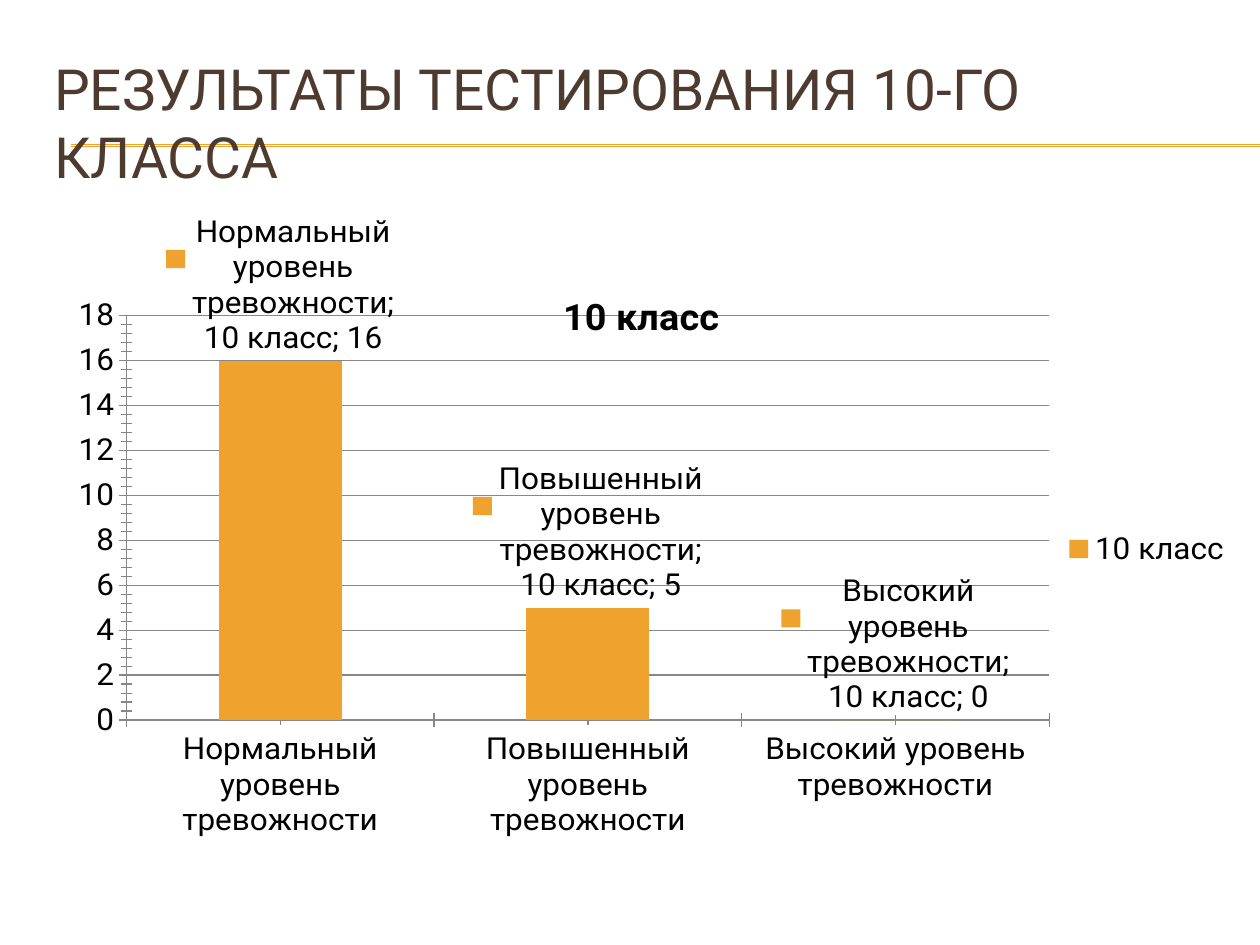
import copy
from dataclasses import dataclass

import lxml.etree
import pptx
import pptx.chart.data
import pptx.dml.color
import pptx.enum.chart
import pptx.enum.shapes
import pptx.enum.text
import pptx.oxml
import pptx.oxml.ns
import pptx.util

qn = pptx.oxml.ns.qn


@dataclass(frozen=True)
class Theme:
    font: str = "Roboto"
    heading: str = "4E3B30"
    accent: str = "F0A22E"
    text: str = "000000"
    grid: str = "878787"
    heading_size: float = 32.4
    chart_size: float = 18
    chart_title_size: float = 21.6
    line_width: float = 0.75


@dataclass(frozen=True)
class Slide:
    width: float = 10
    height: float = 7.5

    def x(self, share: float) -> int:
        return pptx.util.Inches(self.width * share)

    def y(self, share: float) -> int:
        return pptx.util.Inches(self.height * share)


@dataclass(frozen=True)
class Rule:
    top: float
    left: float = 0.056
    right: float = 1


THEME = Theme()
PAGE = Slide()
RULES = [Rule(0.153), Rule(0.155)]
MARGIN, CONTENT_WIDTH = 0.033, 0.95
SERIES_NAME = "10 класс"
LEVELS = {
    "Нормальный уровень тревожности": 16,
    "Повышенный уровень тревожности": 5,
    "Высокий уровень тревожности": 0,
}


def rgb(value: str) -> pptx.dml.color.RGBColor:
    return pptx.dml.color.RGBColor.from_string(value)


def apply(target, values: dict) -> None:
    for name, value in values.items():
        setattr(target, name, value)


def format_font(font, size: float, color: str, bold: bool = False) -> None:
    apply(font, {"name": THEME.font, "size": pptx.util.Pt(size), "bold": bold})
    font.color.rgb = rgb(color)


def format_line(line, color: str) -> None:
    line.color.rgb = rgb(color)
    line.width = pptx.util.Pt(THEME.line_width)


def set_layout(parent, position: int, shares: dict, inner: bool = False) -> None:
    for old in parent.findall(qn("c:layout")):
        parent.remove(old)
    layout = lxml.etree.Element(qn("c:layout"))
    manual = lxml.etree.SubElement(layout, qn("c:manualLayout"))
    settings = {"layoutTarget": "inner"} if inner else {}
    settings |= {"xMode": "edge", "yMode": "edge"} | shares
    for name, value in settings.items():
        lxml.etree.SubElement(manual, qn(f"c:{name}")).set("val", str(value))
    parent.insert(position, layout)


def draw_rule(slide, rule: Rule) -> None:
    line = slide.shapes.add_connector(
        pptx.enum.shapes.MSO_CONNECTOR.STRAIGHT,
        PAGE.x(rule.left), PAGE.y(rule.top), PAGE.x(rule.right), PAGE.y(rule.top))
    format_line(line.line, THEME.accent)
    lxml.etree.SubElement(line._element.spPr, qn("a:effectLst"))


def write_heading(slide, text: str) -> None:
    heading = slide.shapes.title
    apply(heading, {"left": PAGE.x(MARGIN), "top": PAGE.y(0.067),
                    "width": PAGE.x(CONTENT_WIDTH), "height": PAGE.y(0.123)})
    heading.text_frame.text = text
    apply(heading.text_frame, {
        "word_wrap": True,
        "auto_size": pptx.enum.text.MSO_AUTO_SIZE.NONE,
        "vertical_anchor": pptx.enum.text.MSO_ANCHOR.MIDDLE,
    })
    paragraph = heading.text_frame.paragraphs[0]
    paragraph.alignment = pptx.enum.text.PP_ALIGN.LEFT
    format_font(paragraph.runs[0].font, THEME.heading_size, THEME.heading)
    slide.shapes._spTree.append(heading._element)


def format_axes(chart) -> None:
    cross = pptx.enum.chart.XL_TICK_MARK.CROSS
    for axis in (chart.category_axis, chart.value_axis):
        apply(axis, {"visible": True, "major_tick_mark": cross, "minor_tick_mark": cross})
        format_font(axis.tick_labels.font, THEME.chart_size, THEME.text)
        format_line(axis.format.line, THEME.grid)
    apply(chart.value_axis, {"minimum_scale": 0, "maximum_scale": 18, "major_unit": 2,
                             "minor_unit": 0.4, "has_major_gridlines": True})
    format_line(chart.value_axis.major_gridlines.format.line, THEME.grid)


def format_columns(plot) -> None:
    apply(plot, {"vary_by_categories": False, "gap_width": 150})
    series = plot.series[0]
    series.format.fill.solid()
    series.format.fill.fore_color.rgb = rgb(THEME.accent)
    labels = series.data_labels
    apply(labels, {
        "show_value": True, "show_category_name": True, "show_series_name": True,
        "show_legend_key": True,
        "position": pptx.enum.chart.XL_LABEL_POSITION.OUTSIDE_END,
    })
    format_font(labels.font, THEME.chart_size, THEME.text)
    separator = lxml.etree.Element(qn("c:separator"))
    separator.text = "; "
    labels._element.find(qn("c:showBubbleSize")).addnext(separator)


def draw_chart(slide) -> None:
    data = pptx.chart.data.CategoryChartData()
    data.categories = list(LEVELS)
    data.add_series(SERIES_NAME, list(LEVELS.values()))
    chart = slide.shapes.add_chart(
        pptx.enum.chart.XL_CHART_TYPE.COLUMN_CLUSTERED,
        PAGE.x(MARGIN), PAGE.y(0.227), PAGE.x(CONTENT_WIDTH), PAGE.y(0.66), data).chart
    format_font(chart.font, THEME.chart_size, THEME.text)
    apply(chart, {"has_title": True, "has_legend": True})

    caption = chart.chart_title
    caption.text_frame.text = SERIES_NAME
    format_font(caption.text_frame.paragraphs[0].runs[0].font,
                THEME.chart_title_size, THEME.text, True)
    caption._element.find(qn("c:overlay")).set("val", "1")
    set_layout(caption._element, 1, {"x": 0.43, "y": 0.08})

    apply(chart.legend, {"position": pptx.enum.chart.XL_LEGEND_POSITION.RIGHT,
                         "include_in_layout": True})
    format_font(chart.legend.font, THEME.chart_size, THEME.text)
    set_layout(chart.legend._element, 1, {"x": 0.85, "y": 0.48})

    plot_area = chart._chartSpace.chart.plotArea
    set_layout(plot_area, 0, {"x": 0.071, "y": 0.131, "w": 0.771, "h": 0.674}, True)
    format_axes(chart)
    format_columns(chart.plots[0])


def main() -> None:
    deck = pptx.Presentation()
    apply(deck, {"slide_width": PAGE.x(1), "slide_height": PAGE.y(1)})
    slide = deck.slides.add_slide(deck.slide_layouts[5])
    for rule in RULES:
        draw_rule(slide, rule)
    write_heading(slide, "РЕЗУЛЬТАТЫ ТЕСТИРОВАНИЯ 10-ГО КЛАССА")
    draw_chart(slide)
    deck.save("out.pptx")


if __name__ == "__main__":
    main()
